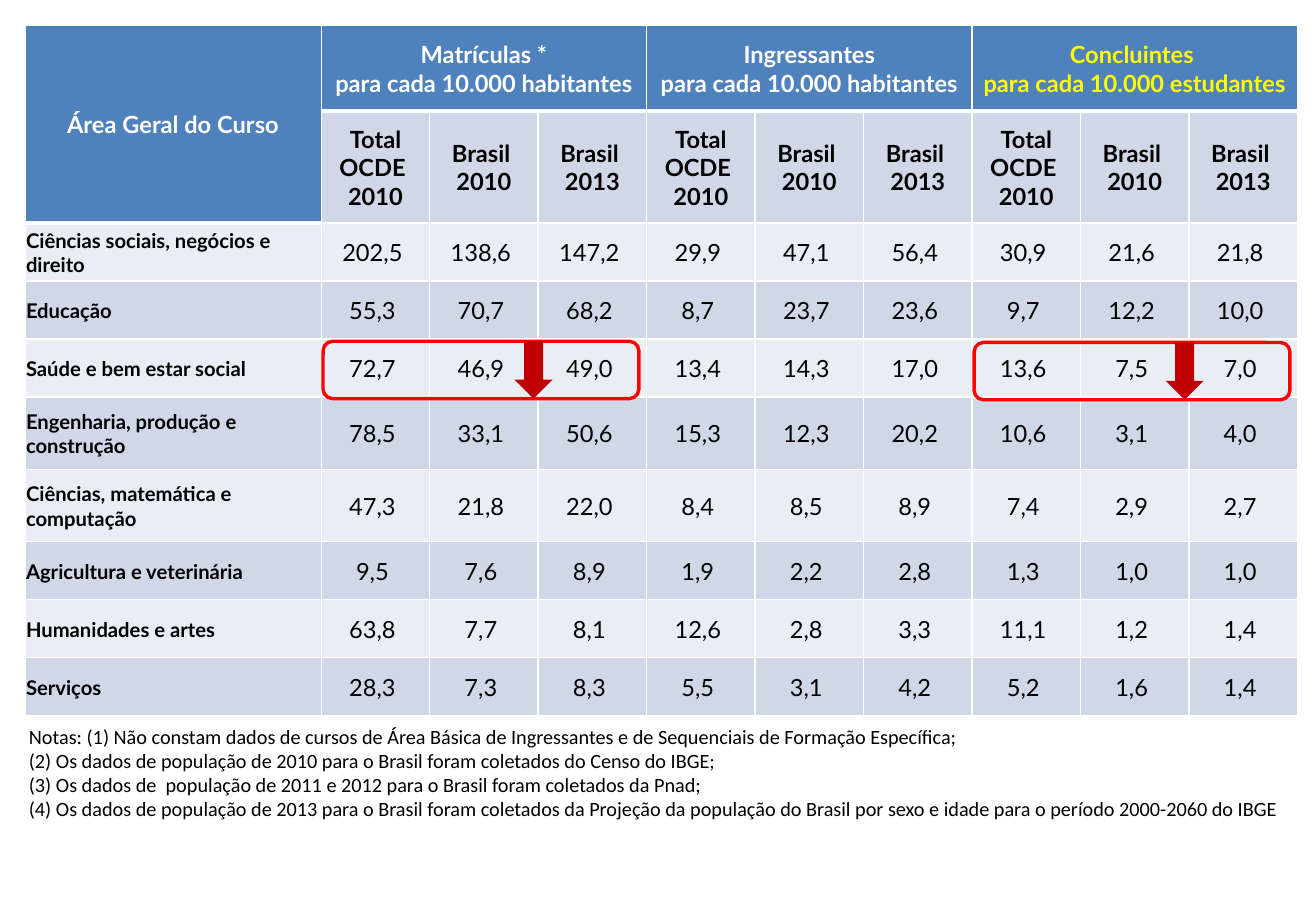
from dataclasses import dataclass

from lxml.etree import SubElement
from pptx import Presentation
from pptx.dml.color import RGBColor as Rgb
from pptx.enum.shapes import MSO_SHAPE as Kind
from pptx.enum.text import MSO_ANCHOR as Anchor, MSO_AUTO_SIZE as Fit, PP_ALIGN as Align
from pptx.oxml.ns import qn
from pptx.util import Pt

COLORS = {
    "head": "4F81BD", "dark": "D0D8E8", "light": "E9EDF4", "white": "FFFFFF",
    "black": "000000", "yellow": "FFFF00", "frame": "FF0000", "arrow": "C00000",
}
LEFT, TOP = 14.7, 15.1
FIRST, COL = 175.7, 64.3
ROWS = [50.8, 66.2] + [34.4] * 3 + [42.9] * 2 + [34.4] * 3


@dataclass
class Group:
    title: str
    color: str


@dataclass
class Area:
    name: str
    rates: str


@dataclass
class Mark:
    left: float
    top: float


GROUPS = [
    Group("Matrículas *\npara cada 10.000 habitantes", "white"),
    Group("Ingressantes\npara cada 10.000 habitantes", "white"),
    Group("Concluintes \npara cada 10.000 estudantes", "yellow"),
]
YEARS = ["Total OCDE \n2010", "Brasil \n2010", "Brasil \n2013"]
AREAS = [
    Area("Ciências sociais, negócios e direito", "202,5 138,6 147,2 29,9 47,1 56,4 30,9 21,6 21,8"),
    Area("Educação", "55,3 70,7 68,2 8,7 23,7 23,6 9,7 12,2 10,0"),
    Area("Saúde e bem estar social", "72,7 46,9 49,0 13,4 14,3 17,0 13,6 7,5 7,0"),
    Area("Engenharia, produção e construção", "78,5 33,1 50,6 15,3 12,3 20,2 10,6 3,1 4,0"),
    Area("Ciências, matemática e computação", "47,3 21,8 22,0 8,4 8,5 8,9 7,4 2,9 2,7"),
    Area("Agricultura e veterinária", "9,5 7,6 8,9 1,9 2,2 2,8 1,3 1,0 1,0"),
    Area("Humanidades e artes", "63,8 7,7 8,1 12,6 2,8 3,3 11,1 1,2 1,4"),
    Area("Serviços", "28,3 7,3 8,3 5,5 3,1 4,2 5,2 1,6 1,4"),
]
NOTES = [
    "Notas: (1) Não constam dados de cursos de Área Básica de Ingressantes e de Sequenciais de Formação Específica;",
    "(2) Os dados de população de 2010 para o Brasil foram coletados do Censo do IBGE;",
    "(3) Os dados de  população de 2011 e 2012 para o Brasil foram coletados da Pnad;",
    "(4) Os dados de população de 2013 para o Brasil foram coletados da Projeção da população do Brasil "
    "por sexo e idade para o período 2000-2060 do IBGE",
]
MARKS = [Mark(191.5, 202.3), Mark(577.4, 203)]


def paint(fill, name: str) -> None:
    fill.solid()
    fill.fore_color.rgb = Rgb.from_string(COLORS[name])


def style(par, size: float, color: str, bold: bool, font: str) -> None:
    for run in par.runs:
        run.font.size = Pt(size)
        run.font.bold = bold
        run.font.name = font
        run.font.color.rgb = Rgb.from_string(COLORS[color])
    for br in par._p.iter(qn("a:br")):
        SubElement(br, qn("a:rPr"), sz=str(size * 100))


def edge(cell, top: float, base: float) -> None:
    """Give a cell white borders; must run before the cell is filled."""
    props = cell._tc.get_or_add_tcPr()
    for tag, width in (("lnL", 1), ("lnR", 1), ("lnT", top), ("lnB", base)):
        line = SubElement(props, qn(f"a:{tag}"), w=str(Pt(width)))
        solid = SubElement(line, qn("a:solidFill"))
        SubElement(solid, qn("a:srgbClr"), val=COLORS["white"])


def write(cell, text: str, color: str = "black", size: int = 14,
          bold: bool = True, align=Align.CENTER) -> None:
    par = cell.text_frame.paragraphs[0]
    par.text = text
    par.alignment = align
    style(par, size, color, bold, "Lato")


def add_grid(slide) -> None:
    count = len(GROUPS) * len(YEARS)
    grid = slide.shapes.add_table(
        len(ROWS), count + 1, Pt(LEFT), Pt(TOP), Pt(FIRST + count * COL), Pt(sum(ROWS))).table
    grid.horz_banding = False
    for i, col in enumerate(grid.columns):
        col.width = Pt(COL if i else FIRST)
    for r, height in enumerate(ROWS):
        grid.rows[r].height = Pt(height)
        for c in range(count + 1):
            cell = grid.cell(r, c)
            cell.vertical_anchor = Anchor.MIDDLE
            cell.margin_left = cell.margin_right = cell.margin_top = Pt(0.72)
            cell.margin_bottom = 0
            edge(cell, 3 if r == 1 or (r, c) == (2, 0) else 1,
                 3 if r == 0 or (r, c) == (1, 0) else 1)
            head = r == 0 or (r, c) == (1, 0)
            paint(cell.fill, "head" if head else "dark" if r % 2 else "light")

    grid.cell(0, 0).merge(grid.cell(1, 0))
    write(grid.cell(0, 0), "Área Geral do Curso", "white")
    for g, group in enumerate(GROUPS):
        start = 1 + g * len(YEARS)
        grid.cell(0, start).merge(grid.cell(0, start + len(YEARS) - 1))
        write(grid.cell(0, start), group.title, group.color)
        for y, year in enumerate(YEARS):
            write(grid.cell(1, start + y), year)
    for r, area in enumerate(AREAS, 2):
        write(grid.cell(r, 0), area.name, size=12, align=Align.LEFT)
        for c, rate in enumerate(area.rates.split(), 1):
            write(grid.cell(r, c), f"{rate} ", bold=False)


def add_notes(slide) -> None:
    box = slide.shapes.add_textbox(Pt(10), Pt(425.5), Pt(760.5), Pt(65.5))
    frame = box.text_frame
    frame.word_wrap = True
    frame.auto_size = Fit.SHAPE_TO_FIT_TEXT
    frame.text = "\n".join(NOTES)
    for par in frame.paragraphs:
        par.alignment = Align.JUSTIFY
        style(par, 12, "black", False, "Calibri")


def add_mark(slide, mark: Mark) -> None:
    """Frame three figures in red and set a down arrow before the last."""
    ring = slide.shapes.add_shape(
        Kind.ROUNDED_RECTANGLE, Pt(mark.left), Pt(mark.top), Pt(187.2), Pt(34))
    ring.shadow.inherit = False
    ring.fill.background()
    ring.line.color.rgb = Rgb.from_string(COLORS["frame"])
    ring.line.width = Pt(2)
    arrow = slide.shapes.add_shape(
        Kind.DOWN_ARROW, Pt(mark.left + 113.5), Pt(mark.top), Pt(22.5), Pt(34))
    arrow.shadow.inherit = False
    paint(arrow.fill, "arrow")
    arrow.line.fill.background()


def main() -> None:
    deck = Presentation()
    deck.slide_width, deck.slide_height = Pt(780), Pt(540)
    slide = deck.slides.add_slide(deck.slide_layouts[6])
    add_grid(slide)
    add_notes(slide)
    for mark in MARKS:
        add_mark(slide, mark)
    deck.save("out.pptx")


if __name__ == "__main__":
    main()
